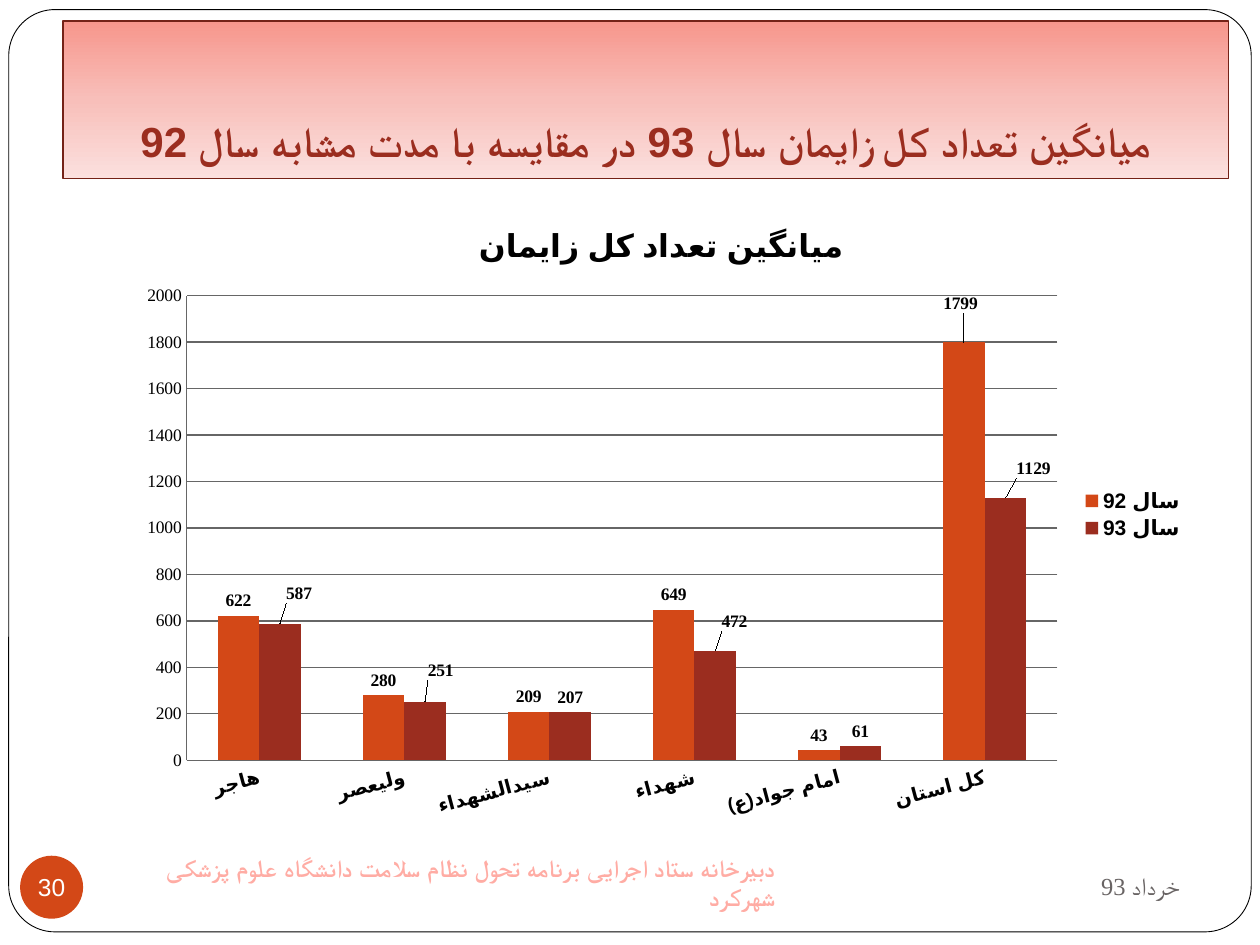
"""Build a slide comparing average births per hospital in two years."""
import lxml.etree
import pptx
import pptx.chart.data
import pptx.dml.color
import pptx.enum.chart
import pptx.enum.shapes
import pptx.enum.text
import pptx.oxml
import pptx.oxml.ns
import pptx.util

Pt = pptx.util.Pt
qn = pptx.oxml.ns.qn
Align = pptx.enum.text.PP_ALIGN
Anchor = pptx.enum.text.MSO_ANCHOR
Shape = pptx.enum.shapes.MSO_SHAPE
Chart = pptx.enum.chart

TITLE = "میانگین تعداد کل زایمان سال 93 در مقایسه با مدت مشابه سال 92"
DATE = "خرداد 93"
FOOTER = "دبیرخانه ستاد اجرایی برنامه تحول نظام سلامت دانشگاه علوم پزشکی شهرکرد"
NUMBER = "30"
CHART_TITLE = "میانگین تعداد کل زایمان"
HOSPITALS = ["هاجر", "ولیعصر", "سیدالشهداء", "شهداء", "امام جواد(ع)", "کل استان"]
SERIES = [
    {"name": "سال 92", "color": "D34817", "values": [622, 280, 209, 649, 43, 1799],
     "label_shifts": {5: (-2, -13.5)}},
    {"name": "سال 93", "color": "9B2D1F", "values": [587, 251, 207, 472, 61, 1129],
     "label_shifts": {0: (11, -9), 1: (9, -9.5), 3: (11, -8), 5: (16, -8.5)}},
]
TITLE_GRADIENT = [(0, "F7968C"), (50, "F8BFBA"), (100, "FBE0DE")]
CHART_WIDTH, CHART_HEIGHT = 612, 360
GRID = "666666"


def rgb(value):
    return pptx.dml.color.RGBColor.from_string(value)


def style_font(font, name, size, color, bold=False, script="Arial"):
    font.name, font.size, font.bold = name, Pt(size), bold
    font.color.rgb = rgb(color)
    lxml.etree.SubElement(font._rPr, qn("a:cs")).set("typeface", script)


def write(shape, text, align, name, size, color, bold=False, script="Arial",
          anchor=Anchor.MIDDLE, wrap=True):
    frame = shape.text_frame
    frame.text = text
    frame.word_wrap, frame.vertical_anchor = wrap, anchor
    paragraph = frame.paragraphs[0]
    paragraph.alignment = align
    paragraph._p.get_or_add_pPr().set("rtl", "1")
    style_font(paragraph.runs[0].font, name, size, color, bold, script)


def add_shape(slide, kind, box, fill, line=None, width=0.5):
    shape = slide.shapes.add_shape(kind, *map(Pt, box))
    shape.shadow.inherit = False
    if fill:
        shape.fill.solid()
        shape.fill.fore_color.rgb = rgb(fill)
    if line:
        shape.line.color.rgb = rgb(line)
        shape.line.width = Pt(width)
    else:
        shape.line.fill.background()
    return shape


def fill_gradient(shape, stops):
    shape.fill.gradient()
    shape.fill.gradient_angle = 270
    stop_list = shape.fill._fill._gradFill.find(qn("a:gsLst"))
    for stop in list(stop_list):
        stop_list.remove(stop)
    for position, color in stops:
        stop = lxml.etree.SubElement(stop_list, qn("a:gs"), pos=str(position * 1000))
        lxml.etree.SubElement(stop, qn("a:srgbClr"), val=color)


def make_shift(x, y):
    layout = pptx.oxml.parse_xml(f'<c:layout {pptx.oxml.ns.nsdecls("c")}/>')
    manual = lxml.etree.SubElement(layout, qn("c:manualLayout"))
    lxml.etree.SubElement(manual, qn("c:x"), val=str(x / CHART_WIDTH))
    lxml.etree.SubElement(manual, qn("c:y"), val=str(y / CHART_HEIGHT))
    return layout


def style_labels(labels):
    style_font(labels.font, "Times New Roman", 10, "000000", True)
    labels.position = Chart.XL_LABEL_POSITION.OUTSIDE_END


def hide_leader_lines(labels):
    element = labels._element
    for leader in element.findall(qn("c:showLeaderLines")):
        element.remove(leader)
    element.append(pptx.oxml.parse_xml(
        f'<c:extLst {pptx.oxml.ns.nsdecls("c")}>'
        '<c:ext uri="{CE6537A1-D6FC-4f65-9D91-7224C49458BB}"'
        ' xmlns:c15="http://schemas.microsoft.com/office/drawing/2012/chart">'
        '<c15:showLeaderLines val="0"/></c:ext></c:extLst>'))


def style_series(series, content):
    series.format.fill.solid()
    series.format.fill.fore_color.rgb = rgb(content["color"])
    series.data_labels.show_value = True
    style_labels(series.data_labels)
    for index, shift in content["label_shifts"].items():
        style_labels(series.points[index].data_label)
        element = series._element.xpath(f"c:dLbls/c:dLbl[c:idx/@val={index}]")[0]
        element.insert(1, make_shift(*shift))
    hide_leader_lines(series.data_labels)


def add_births_chart(slide):
    data = pptx.chart.data.CategoryChartData()
    data.categories = HOSPITALS
    for content in SERIES:
        data.add_series(content["name"], content["values"])
    chart = slide.shapes.add_chart(
        Chart.XL_CHART_TYPE.COLUMN_CLUSTERED, Pt(72), Pt(114),
        Pt(CHART_WIDTH), Pt(CHART_HEIGHT), data).chart
    style_font(chart.font, "Times New Roman", 10, "000000")
    chart.has_title = True
    chart.chart_title.include_in_layout = False
    title_frame = chart.chart_title.text_frame
    title_frame.text = CHART_TITLE
    style_font(title_frame.paragraphs[0].runs[0].font, "Times New Roman", 18, "000000", True)
    chart.has_legend = True
    chart.legend.position = Chart.XL_LEGEND_POSITION.RIGHT
    chart.legend.include_in_layout = False
    style_font(chart.legend.font, "Times New Roman", 12, "000000", True)

    plot = chart.plots[0]
    plot.gap_width, plot.overlap, plot.vary_by_categories = 150, 0, False
    for series, content in zip(plot.series, SERIES):
        style_series(series, content)

    for axis in (chart.category_axis, chart.value_axis):
        axis.major_tick_mark = axis.minor_tick_mark = Chart.XL_TICK_MARK.NONE
        axis.format.line.color.rgb = rgb(GRID)
    style_font(chart.category_axis.tick_labels.font, "Times New Roman", 11, "000000", True)
    chart.category_axis._element.find(qn("c:txPr")).find(qn("a:bodyPr")).set("rot", "-900000")
    value_axis = chart.value_axis
    style_font(value_axis.tick_labels.font, "Times New Roman", 10, "000000")
    value_axis.minimum_scale, value_axis.maximum_scale, value_axis.major_unit = 0, 2000, 200
    value_axis.major_gridlines.format.line.color.rgb = rgb(GRID)


def main():
    presentation = pptx.Presentation()
    presentation.slide_width, presentation.slide_height = Pt(720), Pt(540)
    slide = presentation.slides.add_slide(presentation.slide_layouts[6])

    frame = add_shape(slide, Shape.ROUNDED_RECTANGLE, (5, 5.5, 710, 527), "FFFFFF", "000000")
    frame.adjustments[0] = 0.05

    date = slide.shapes.add_textbox(Pt(486), Pt(487.5), Pt(195), Pt(37.5))
    write(date, DATE, Align.RIGHT, "Times New Roman", 14, "696464", script="Times New Roman")
    footer = slide.shapes.add_textbox(Pt(72), Pt(486), Pt(378), Pt(36))
    write(footer, FOOTER, Align.RIGHT, "Times New Roman", 14, "FFACA4", True)

    badge = add_shape(slide, Shape.OVAL, (11.5, 489, 36, 36), "D34817")
    write(badge, NUMBER, Align.CENTER, "Lato", 14, "FFFFFF", wrap=False)
    badge_frame = badge.text_frame
    badge_frame.margin_left = badge_frame.margin_right = 0
    badge_frame.margin_top = badge_frame.margin_bottom = 0

    add_births_chart(slide)

    banner = add_shape(slide, Shape.RECTANGLE, (36, 12, 666, 90), None, "742217", 0.75)
    fill_gradient(banner, TITLE_GRADIENT)
    write(banner, TITLE, Align.CENTER, "Lato", 24, "9B2D1F", True, anchor=Anchor.BOTTOM)
    banner.text_frame.margin_bottom = Pt(7.2)

    presentation.save("out.pptx")


if __name__ == "__main__":
    main()
